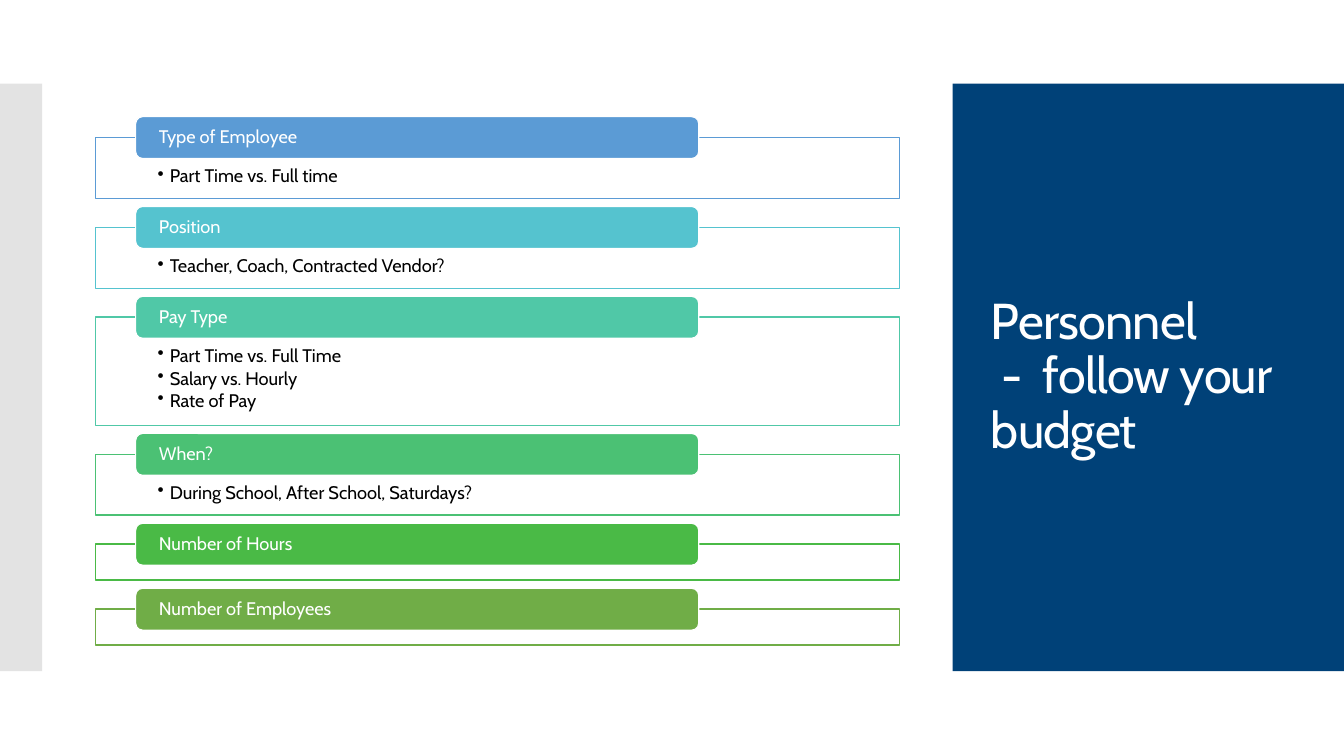
from pptx import Presentation
from pptx.dml.color import RGBColor
from pptx.enum import shapes, text
from pptx.oxml import ns
from pptx.util import Pt
from dataclasses import dataclass
from lxml import etree


@dataclass(frozen=True)
class Theme:
    font: str = "Cabin"
    navy: str = "004178"
    grey: str = "C8C8C8"
    white: str = "FFFFFF"
    black: str = "000000"
    title_size: float = 36
    body_size: float = 13
    line_width: float = 0.85


class SlideBuilder:
    def __init__(self, slide, theme):
        self.slide, self.theme = slide, theme

    def box(self, kind, x, y, w, h, fill, line=None, opacity=None):
        sp = self.slide.shapes.add_shape(kind, Pt(x), Pt(y), Pt(w), Pt(h))
        sp.shadow.inherit = False
        sp.fill.solid()
        sp.fill.fore_color.rgb = RGBColor.from_string(fill)
        if line:
            sp.line.color.rgb = RGBColor.from_string(line)
            sp.line.width = Pt(self.theme.line_width)
        else:
            sp.line.fill.background()
        if opacity:
            color = sp.fill._xPr.find(".//" + ns.qn("a:srgbClr"))
            etree.SubElement(color, ns.qn("a:alpha"), val=str(opacity * 1000))
        return sp

    def frame_text(self, sp, content, size, color, insets, anchor, after=0):
        tf = sp.text_frame
        tf.text = content
        tf.word_wrap = True
        tf.auto_size = text.MSO_AUTO_SIZE.NONE
        tf.vertical_anchor = anchor
        tf.margin_left, tf.margin_top, tf.margin_right, tf.margin_bottom = map(Pt, insets)
        for p in tf.paragraphs:
            p.alignment = text.PP_ALIGN.LEFT
            p.line_spacing = 0.9
            p.space_before, p.space_after = Pt(0), Pt(after)
            for r in p.runs:
                r.font.name, r.font.size = self.theme.font, Pt(size)
                r.font.color.rgb = RGBColor.from_string(color)
        return tf

    def title(self, content, x, y, w, h):
        sp = self.slide.shapes.title
        sp.left, sp.top, sp.width, sp.height = Pt(x), Pt(y), Pt(w), Pt(h)
        tf = self.frame_text(sp, content, self.theme.title_size, self.theme.white,
                             (7.2, 3.6, 7.2, 3.6), text.MSO_ANCHOR.MIDDLE)
        for r in tf.paragraphs[0].runs:
            r.font._element.set("spc", "-60")
        # Bring the title in front of the panel
        self.slide.shapes._spTree.append(sp._element)

    def bullets(self, sp, items):
        tf = self.frame_text(sp, "\n".join(items), self.theme.body_size, self.theme.black,
                             (44.6, 21.3, 44.6, 7.2), text.MSO_ANCHOR.TOP, after=1.95)
        for p in tf.paragraphs:
            p.level = 1
            pPr = p._p.get_or_add_pPr()
            pPr.set("marL", str(Pt(8.6)))
            pPr.set("indent", str(-Pt(8.6)))
            etree.SubElement(pPr, ns.qn("a:buChar"), char="•")

    def section(self, y, h, heading, color, items):
        frame = self.box(shapes.MSO_SHAPE.RECTANGLE, 68.1, y, 574.6, h,
                         self.theme.white, color, opacity=90)
        if items:
            self.bullets(frame, items)
        bar = self.box(shapes.MSO_SHAPE.ROUNDED_RECTANGLE, 96.9, y - 14.8, 402.2, 29.9,
                       color, self.theme.white)
        self.frame_text(bar, heading, self.theme.body_size, self.theme.white,
                        (15.2, 0, 15.2, 0), text.MSO_ANCHOR.MIDDLE)


# Heading, colour, frame height, bullet items
SECTIONS = [
    ("Type of Employee", "5B9BD5", 43.5, ["Part Time vs. Full time"]),
    ("Position", "55C3CF", 43.5, ["Teacher, Coach, Contracted Vendor?"]),
    ("Pay Type", "50C8A7", 77.2, ["Part Time vs. Full Time", "Salary vs. Hourly", "Rate of Pay"]),
    ("When?", "4BC174", 43.5, ["During School, After School, Saturdays?"]),
    ("Number of Hours", "4ABA46", 25.7, []),
    ("Number of Employees", "70AD47", 25.7, []),
]
SECTION_GAP = 20.7


def main():
    prs = Presentation()
    prs.slide_width, prs.slide_height = Pt(960), Pt(540)
    theme = Theme()
    page = SlideBuilder(prs.slides.add_slide(prs.slide_layouts[5]), theme)

    # Title panel and left edge strip
    rect = shapes.MSO_SHAPE.RECTANGLE
    page.box(rect, 680.4, 59.8, 279.6, 419.6, theme.navy)
    page.title("Personnel\v -  follow your budget", 700.6, 88.6, 231.8, 362.2)
    page.box(rect, 0, 59.8, 30.2, 419.6, theme.grey, opacity=50)

    # Stacked sections
    y = 98.1
    for heading, color, height, items in SECTIONS:
        page.section(y, height, heading, color, items)
        y += height + SECTION_GAP

    prs.save("out.pptx")


if __name__ == "__main__":
    main()
